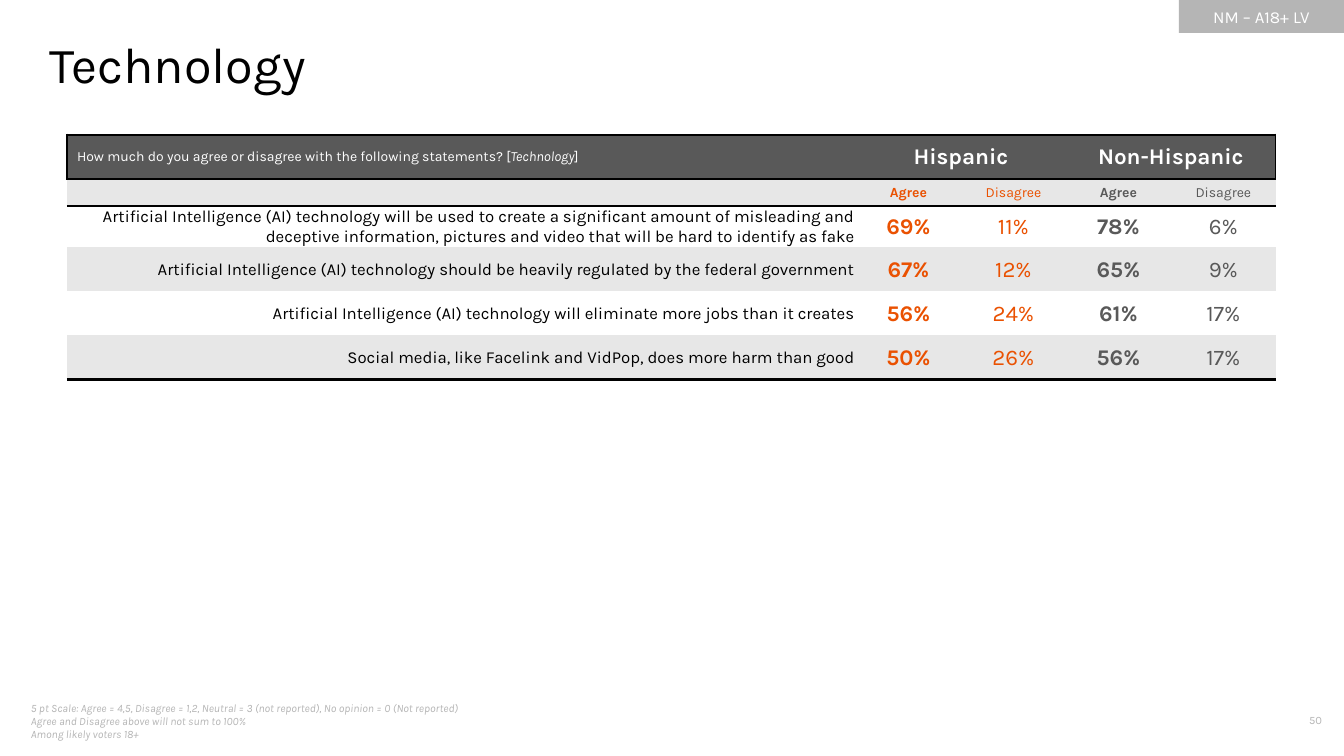
"""Build the Technology survey slide with its agree and disagree table."""
from lxml.etree import SubElement
from pptx import Presentation
from pptx.dml.color import RGBColor
from pptx.enum.shapes import MSO_SHAPE
from pptx.enum.text import MSO_ANCHOR, PP_ALIGN
from pptx.oxml.ns import qn
from pptx.util import Pt

TITLE = "Technology"
TAG = "NM – A18+ LV"
PAGE = "50"
NOTES = [
    "5 pt Scale: Agree = 4,5, Disagree = 1,2, Neutral = 3 (not reported), No opinion = 0 (Not reported)",
    "Agree and Disagree above will not sum to 100%",
    "Among likely voters 18+",
]
QUESTION = [
    ("How much do you agree or disagree with the following statements? [", False),
    ("Technology", True),
    ("]", False),
]
GROUPS = ["Hispanic", "Non-Hispanic"]
ANSWERS = ["Agree", "Disagree"] * 2
RESULTS = [
    ("Artificial Intelligence (AI) technology will be used to create a significant amount of "
     "misleading and deceptive information, pictures and video that will be hard to identify as fake",
     "69%", "11%", "78%", "6%"),
    ("Artificial Intelligence (AI) technology should be heavily regulated by the federal government",
     "67%", "12%", "65%", "9%"),
    ("Artificial Intelligence (AI) technology will eliminate more jobs than it creates",
     "56%", "24%", "61%", "17%"),
    ("Social media, like Facelink and VidPop, does more harm than good",
     "50%", "26%", "56%", "17%"),
]

BLACK = RGBColor(0, 0, 0)
WHITE = RGBColor(255, 255, 255)
DARK = RGBColor(0x59, 0x59, 0x59)
SILVER = RGBColor(0xB5, 0xB5, 0xB5)
BAND = RGBColor(0xE7, 0xE7, 0xE7)
ORANGE = RGBColor(0xEA, 0x51, 0x01)
FONT = "Karla"
NO_GRID = "{2D5ABB26-0587-4C30-8999-92F81FD0307C}"
WIDTHS = [789] + [105] * 4
HEIGHTS = [44, 26, 40, 44, 44, 44]
LAST = len(HEIGHTS) - 1


def px(*sizes):
    """Turn pixels into EMU."""
    return [round(size * 914400 / 100.8) for size in sizes]


def write(para, text, size, color, bold=False, italic=False, align=PP_ALIGN.LEFT):
    """Add one styled run to a paragraph."""
    para.alignment = align
    run = para.add_run()
    run.text = text
    font = run.font
    font.name, font.size, font.bold, font.italic = FONT, Pt(size), bold, italic
    font.color.rgb = color


def add_box(slide, place, lines, size, color, anchor=MSO_ANCHOR.TOP, **style):
    """Add a text box with one paragraph for each line."""
    frame = slide.shapes.add_textbox(*px(*place)).text_frame
    frame.word_wrap = True
    frame.vertical_anchor = anchor
    for num, line in enumerate(lines):
        para = frame.add_paragraph() if num else frame.paragraphs[0]
        write(para, line, size, color, **style)
    return frame


def add_edge(cell, side, width):
    """Draw a black border on one side of a cell."""
    line = SubElement(cell._tc.get_or_add_tcPr(), qn(f"a:ln{side}"), w=str(Pt(width)))
    fill = SubElement(line, qn("a:solidFill"))
    SubElement(fill, qn("a:srgbClr"), val=str(BLACK))


def style_cell(cell, row, col):
    """Set the borders, fill and anchor of a cell."""
    edges = [("L", 1, row == 0 and col == 0), ("R", 1, row == 0 and col > 2),
             ("T", 2.25, row < 2), ("B", 2.25, row in (0, LAST))]
    for side, width, shown in edges:
        if shown:
            add_edge(cell, side, width)
    cell.fill.solid()
    cell.fill.fore_color.rgb = DARK if row == 0 else BAND if row % 2 else WHITE
    cell.vertical_anchor = MSO_ANCHOR.MIDDLE
    if row > 1:
        cell.margin_left = cell.margin_right = cell.margin_top = px(1)[0]
        cell.margin_bottom = 0


def add_results(slide):
    """Add the survey table."""
    place = px(67, 135, sum(WIDTHS), sum(HEIGHTS))
    table = slide.shapes.add_table(len(HEIGHTS), len(WIDTHS), *place).table
    table.first_row = table.horz_banding = False
    table._tbl.tblPr.find(qn("a:tableStyleId")).text = NO_GRID
    for column, width in zip(table.columns, px(*WIDTHS)):
        column.width = width
    for line, height in zip(table.rows, px(*HEIGHTS)):
        line.height = height
    for row in range(len(HEIGHTS)):
        for col in range(len(WIDTHS)):
            style_cell(table.cell(row, col), row, col)

    def para(row, col):
        return table.cell(row, col).text_frame.paragraphs[0]

    for text, italic in QUESTION:
        write(para(0, 0), text, 10, WHITE, italic=italic)
    for num, group in enumerate(GROUPS):
        col = 1 + 2 * num
        table.cell(0, col).merge(table.cell(0, col + 1))
        write(para(0, col), group, 16, WHITE, bold=True, align=PP_ALIGN.CENTER)
    SubElement(para(1, 0)._p, qn("a:endParaRPr"), sz="1000")
    for row, (claim, *values) in enumerate([("", *ANSWERS), *RESULTS], 1):
        if claim:
            write(para(row, 0), claim, 12, BLACK, align=PP_ALIGN.RIGHT)
        for col, value in enumerate(values, 1):
            write(para(row, col), value, 10 if row == 1 else 16,
                  ORANGE if col < 3 else DARK, bold=col % 2 == 1, align=PP_ALIGN.CENTER)


def add_tag(slide):
    """Add the grey audience tag in the corner."""
    tag = slide.shapes.add_shape(MSO_SHAPE.RECTANGLE, *px(1179, 0, 165, 33))
    tag.shadow.inherit = False
    tag.fill.solid()
    tag.fill.fore_color.rgb = SILVER
    tag.line.fill.background()
    tag.text_frame.vertical_anchor = MSO_ANCHOR.MIDDLE
    write(tag.text_frame.paragraphs[0], TAG, 12, WHITE, align=PP_ALIGN.CENTER)


def main():
    """Build and save the slide."""
    deck = Presentation()
    deck.slide_width, deck.slide_height = px(1344, 756)
    slide = deck.slides.add_slide(deck.slide_layouts[6])
    add_box(slide, (21, 701, 515, 40), NOTES, 8, SILVER, MSO_ANCHOR.MIDDLE, italic=True)
    add_box(slide, (1243, 708, 89, 27), [PAGE], 8, SILVER, align=PP_ALIGN.RIGHT)
    add_tag(slide)
    title = add_box(slide, (50, 33, 1210, 61), [TITLE], 36, BLACK)
    title.margin_left = title.margin_right = title.margin_top = title.margin_bottom = 0
    add_results(slide)
    deck.save("out.pptx")


if __name__ == "__main__":
    main()
